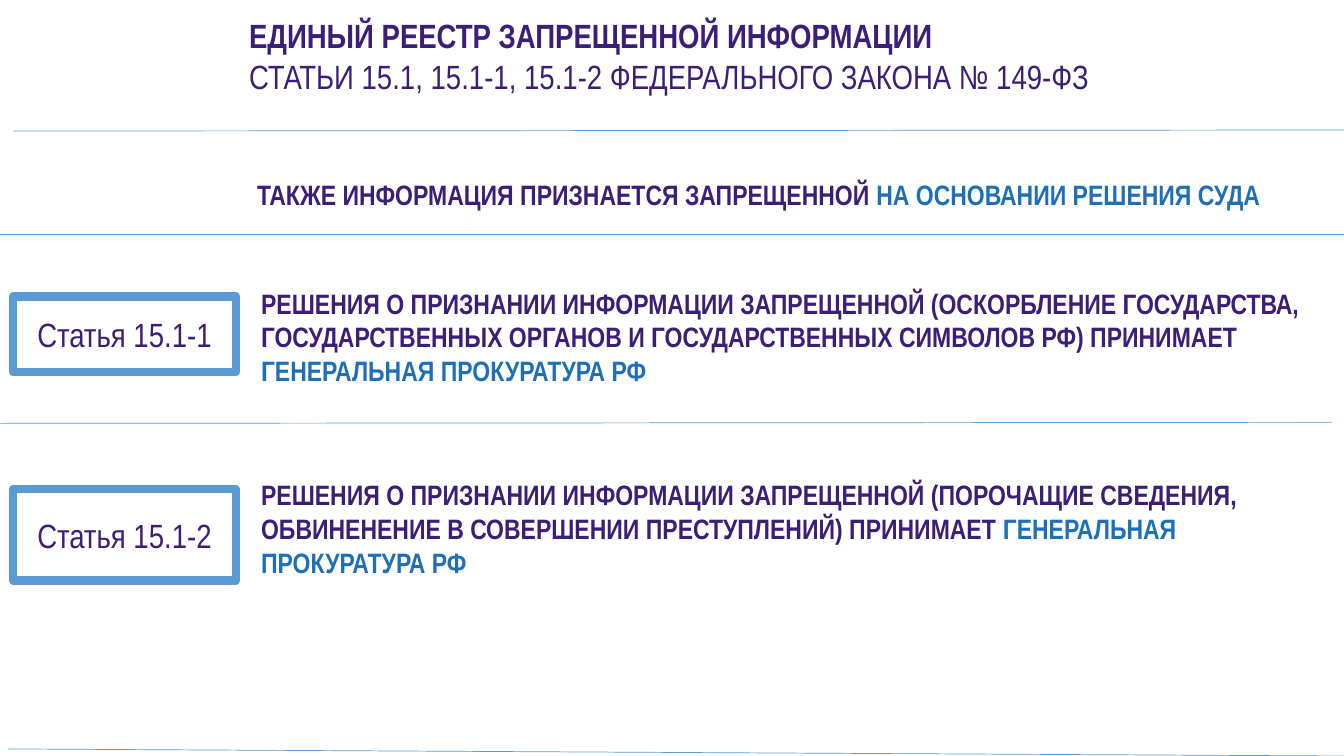
"""Build the slide on the register of prohibited information."""
from dataclasses import dataclass

import pptx
import pptx.dml.color
import pptx.enum.shapes
import pptx.enum.text
import pptx.util
from lxml import etree

Inches = pptx.util.Inches
Align = pptx.enum.text.PP_ALIGN
Anchor = pptx.enum.text.MSO_ANCHOR

FONT = "Arial Narrow"
PURPLE, BLUE, SKY, WHITE = "3C1E78", "1D70B7", "5B9BD5", "FFFFFF"


@dataclass
class Statement:
    """A bold sentence with a highlighted ending."""
    left: float
    top: float
    width: float
    height: float
    lead: str
    ending: str
    align: Align = Align.LEFT


@dataclass
class Article:
    """A framed article number."""
    label: str
    top: float
    height: float


@dataclass
class Rule:
    """A thin dividing line."""
    left: float
    start: float
    right: float
    end: float


STATEMENTS = [
    Statement(2.47, 1.76, 10.11, 0.34, "ТАКЖЕ ИНФОРМАЦИЯ ПРИЗНАЕТСЯ ЗАПРЕЩЕННОЙ ",
              "НА ОСНОВАНИИ РЕШЕНИЯ СУДА", Align.CENTER),
    Statement(2.59, 2.84, 11.25, 1.01,
              "РЕШЕНИЯ О ПРИЗНАНИИ ИНФОРМАЦИИ ЗАПРЕЩЕННОЙ (ОСКОРБЛЕНИЕ ГОСУДАРСТВА, "
              "ГОСУДАРСТВЕННЫХ ОРГАНОВ И ГОСУДАРСТВЕННЫХ СИМВОЛОВ РФ) ПРИНИМАЕТ ",
              "ГЕНЕРАЛЬНАЯ ПРОКУРАТУРА РФ"),
    Statement(2.59, 4.74, 10.23, 1.01,
              "РЕШЕНИЯ О ПРИЗНАНИИ ИНФОРМАЦИИ ЗАПРЕЩЕННОЙ (ПОРОЧАЩИЕ СВЕДЕНИЯ, "
              "ОБВИНЕНЕНИЕ В СОВЕРШЕНИИ ПРЕСТУПЛЕНИЙ) ПРИНИМАЕТ ",
              "ГЕНЕРАЛЬНАЯ ПРОКУРАТУРА РФ"),
]
ARTICLES = [Article("Статья 15.1-1", 2.94, 0.75), Article("Статья 15.1-2", 4.85, 0.91)]
RULES = [
    Rule(0.13, 1.3, 13.33, 1.29),
    Rule(0, 2.33, 13.33, 2.33),
    Rule(0, 4.2, 13.21, 4.19),
    Rule(0.08, 7.43, 13.33, 7.5),
]


def paint(target, color: str) -> None:
    """Apply a hex colour to a font colour, fill or line colour format."""
    target.rgb = pptx.dml.color.RGBColor.from_string(color)


def style(paragraph, size: int, bold: bool, align: Align) -> None:
    """Set the common look of a paragraph."""
    paragraph.alignment = align
    paragraph.font.name = FONT
    paragraph.font.size = pptx.util.Pt(size)
    paragraph.font.bold = bold
    paint(paragraph.font.color, PURPLE)


def open_frame(frame) -> None:
    """Give a text frame no margins, wrapping and top anchoring."""
    frame.margin_left = frame.margin_right = frame.margin_top = frame.margin_bottom = 0
    frame.word_wrap = True
    frame.auto_size = pptx.enum.text.MSO_AUTO_SIZE.NONE
    frame.vertical_anchor = Anchor.TOP


def draw_heading(slide) -> None:
    """Fill the title placeholder with its two lines."""
    heading = slide.shapes.title
    heading.left, heading.top = Inches(2.47), Inches(0.15)
    heading.width, heading.height = Inches(9.89), Inches(0.81)
    open_frame(heading.text_frame)
    heading.text_frame.text = ("ЕДИНЫЙ РЕЕСТР ЗАПРЕЩЕННОЙ ИНФОРМАЦИИ\n"
                               "СТАТЬИ 15.1, 15.1-1, 15.1-2 ФЕДЕРАЛЬНОГО ЗАКОНА № 149-ФЗ")
    for paragraph, bold in zip(heading.text_frame.paragraphs, (True, False)):
        style(paragraph, 24, bold, Align.LEFT)


def draw_statement(slide, statement: Statement) -> None:
    """Draw a sentence whose ending is blue."""
    box = slide.shapes.add_textbox(Inches(statement.left), Inches(statement.top),
                                   Inches(statement.width), Inches(statement.height))
    open_frame(box.text_frame)
    sentence = box.text_frame.paragraphs[0]
    style(sentence, 20, True, statement.align)
    for words, color in ((statement.lead, PURPLE), (statement.ending, BLUE)):
        part = sentence.add_run()
        part.text = words
        paint(part.font.color, color)


def draw_article(slide, article: Article) -> None:
    """Draw a framed article number."""
    frame = slide.shapes.add_shape(pptx.enum.shapes.MSO_SHAPE.RECTANGLE,
                                   Inches(0.13), Inches(article.top),
                                   Inches(2.21), Inches(article.height))
    frame.shadow.inherit = False
    frame.fill.solid()
    paint(frame.fill.fore_color, WHITE)
    paint(frame.line.color, SKY)
    frame.line.width = pptx.util.Pt(6)
    frame.text_frame.vertical_anchor = Anchor.MIDDLE
    frame.text_frame.text = article.label
    style(frame.text_frame.paragraphs[0], 24, False, Align.CENTER)


def draw_rule(slide, rule: Rule) -> None:
    """Draw a thin line without a shadow."""
    divider = slide.shapes.add_connector(pptx.enum.shapes.MSO_CONNECTOR.STRAIGHT,
                                         Inches(rule.left), Inches(rule.start),
                                         Inches(rule.right), Inches(rule.end))
    paint(divider.line.color, SKY)
    divider.line.width = pptx.util.Pt(0.5)
    etree.SubElement(divider._element.spPr, pptx.oxml.ns.qn("a:effectLst"))


def main() -> None:
    """Build and save the slide."""
    deck = pptx.Presentation()
    deck.slide_width, deck.slide_height = Inches(13.33), Inches(7.5)
    slide = deck.slides.add_slide(deck.slide_layouts.get_by_name("Title Only"))
    draw_heading(slide)
    for statement in STATEMENTS:
        draw_statement(slide, statement)
    for article in ARTICLES:
        draw_article(slide, article)
    for rule in RULES:
        draw_rule(slide, rule)
    deck.save("out.pptx")


if __name__ == "__main__":
    main()
